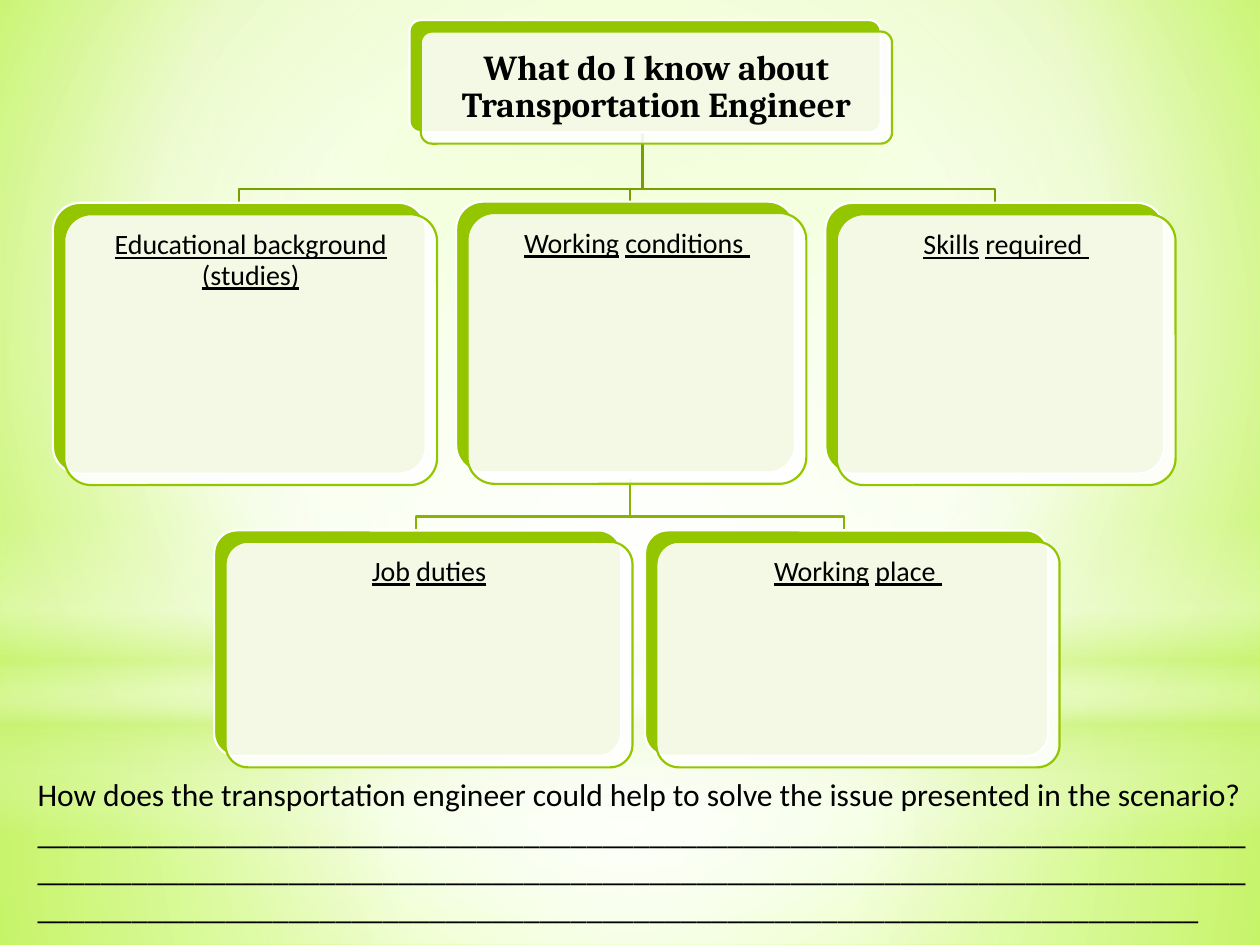
from dataclasses import dataclass
from lxml import etree
from pptx import Presentation
from pptx import util as u
from pptx.dml.color import RGBColor
from pptx.enum import shapes, text
from pptx.oxml.ns import qn

KIND = shapes.MSO_SHAPE
UNIT = u.Inches(0.1)  # the slide is a grid of 100 columns and 75 rows


class Theme:
    green, white, ink = "94C600", "FFFFFF", "000000"
    upper, lower = "779F00", "86B400"
    head, body = "Cambria", "Calibri"
    big, mid, small = 20, 18, 16
    line = 1.25
    tint = "CAF278"


@dataclass
class Box:
    x: float
    y: float
    w: float
    h: float

    def shift(self, d):
        return Box(self.x + d, self.y + d, self.w, self.h)

    def inset(self, d):
        return Box(self.x + d, self.y + d, self.w - 2 * d, self.h - 2 * d)

    def emu(self):
        return [u.Emu(int(v * UNIT)) for v in (self.x, self.y, self.w, self.h)]


def color(parent, rgb, alpha=100):
    node = etree.SubElement(parent, qn("a:srgbClr"), val=rgb)
    if alpha < 100:
        etree.SubElement(node, qn("a:alpha"), val=str(alpha * 1000))


def blend(owner, fill, stops, focus=None):
    """Gradient fill: round about the focus rectangle, or top to bottom."""
    fill.gradient()
    grad = next(owner.iter(qn("a:gradFill")))
    grad.clear()
    group = etree.SubElement(grad, qn("a:gsLst"))
    for pos, *tone in stops:
        color(etree.SubElement(group, qn("a:gs"), pos=str(pos * 1000)), *tone)
    if focus:
        way = etree.SubElement(grad, qn("a:path"), path="circle")
        rect = etree.SubElement(way, qn("a:fillToRect"))
        for side, share in zip("ltrb", focus):
            rect.set(side, str(share * 1000))
    else:
        etree.SubElement(grad, qn("a:lin"), ang="5400000", scaled="0")


def backdrop(slide):
    blend(slide._element, slide.background.fill,
          [(0, "CAFF60"), (60, "F7FFE7"), (100, "B7FF29")], (20, 10, 20, 60))
    white, tint, mid = Theme.white, Theme.tint, (50, 50, 50, 50)
    layers = [
        (KIND.RECTANGLE, Box(0, 55.8, 100, 19.2), mid,
         [(0, white, 91), (37, white, 76), (100, tint, 79)]),
        (KIND.RECTANGLE, Box(0, 0, 100, 55.8), mid,
         [(0, white, 89), (48, white, 62), (100, tint, 79)]),
        (KIND.RECTANGLE, Box(0, 41.2, 100, 25), None,
         [(0, white, 0), (29, white, 30), (45, tint, 40), (55, white, 26),
          (65, tint, 60), (100, white, 0)]),
        (KIND.OVAL, Box(0, 17.5, 100, 55.8), mid,
         [(0, white), (56, white, 0)]),
    ]
    for kind, box, focus, stops in layers:
        item = slide.shapes.add_shape(kind, *box.emu())
        item.shadow.inherit = False
        item.line.fill.background()
        blend(item._element, item.fill, stops, focus)


def panel(slide, box, fill, line, alpha=100):
    item = slide.shapes.add_shape(KIND.ROUNDED_RECTANGLE, *box.emu())
    item.adjustments[0] = 0.1
    item.shadow.inherit = False
    item.fill.solid()
    item.fill.fore_color.rgb = RGBColor.from_string(fill)
    if alpha < 100:
        tone = next(item._element.spPr.iter(qn("a:srgbClr")))
        etree.SubElement(tone, qn("a:alpha"), val=str(alpha * 1000))
    item.line.color.rgb = RGBColor.from_string(line)
    item.line.width = u.Pt(Theme.line)


def write(item, box, parts, face, size, pad=None, bold=False, under=False,
          anchor=text.MSO_ANCHOR.TOP, align=text.PP_ALIGN.CENTER, gap=0.9,
          fit=text.MSO_AUTO_SIZE.NONE):
    item.left, item.top, item.width, item.height = box.emu()
    frame = item.text_frame
    look = {"word_wrap": True, "auto_size": fit, "vertical_anchor": anchor}
    if pad:
        look |= {f"margin_{side}": u.Inches(pad)
                 for side in ("left", "top", "right", "bottom")}
    for name, value in look.items():
        setattr(frame, name, value)
    para = frame.paragraphs[0]
    para.alignment, para.line_spacing = align, gap
    for part in parts:
        run = para.add_run()
        run.text = part
        style = {"name": face, "size": u.Pt(size), "bold": bold,
                 "underline": under and part != " "}
        for name, value in style.items():
            setattr(run.font, name, value)
        run.font.color.rgb = RGBColor.from_string(Theme.ink)


def card(slide, box):
    """Draws the two panels and returns the room for text."""
    front = box.shift(0.9)
    panel(slide, box, Theme.green, Theme.white)
    panel(slide, front, Theme.white, Theme.green, 90)
    return front.inset(0.029 * box.h)


def topic(slide, box, parts):
    room = card(slide, box)
    item = slide.shapes.add_textbox(*room.emu())
    write(item, room, parts, Theme.body, Theme.small, 0.07, under=True)


def heading(slide, box, words):
    room = card(slide, box)
    item = slide.shapes.title
    slide.shapes._spTree.append(item._element)
    write(item, room, [words], Theme.head, Theme.big, 0.08, bold=True,
          anchor=text.MSO_ANCHOR.MIDDLE)


def branch(slide, top, child, tone):
    """Elbow line from the foot of one card to the head of another."""
    x, y = top.x + top.w / 2, top.y + top.h
    end, knee = child.x + child.w / 2, child.y - 0.8
    pen = slide.shapes.build_freeform(x, y, scale=UNIT)
    pen.add_line_segments([(x, knee), (end, knee), (end, child.y)], close=False)
    item = pen.convert_to_shape()
    item.shadow.inherit = False
    item.fill.background()
    item.line.color.rgb = RGBColor.from_string(tone)
    item.line.width = u.Pt(Theme.line)


def question(slide, box):
    item = slide.shapes.add_textbox(*box.emu())
    words = ("How does the transportation engineer could help to solve "
             "the issue presented in the scenario? ")
    write(item, box, [words + "_" * 228], Theme.body, Theme.mid, gap=1.0,
          align=text.PP_ALIGN.LEFT, fit=text.MSO_AUTO_SIZE.SHAPE_TO_FIT_TEXT)


def main():
    deck = Presentation()
    deck.slide_width, deck.slide_height = 100 * UNIT, 75 * UNIT
    slide = deck.slides.add_slide(deck.slide_layouts[5])
    backdrop(slide)

    root = Box(32.5, 1.6, 37.4, 8.9)
    study = Box(4.2, 16.1, 29.6, 21.5)
    work = Box(36.2, 16, 26.9, 21.5)
    skill = Box(65.5, 16.1, 26.9, 21.5)
    duty = Box(17, 42.1, 32.3, 17.9)
    place = Box(51.2, 42.1, 32, 17.9)

    for child in (skill, work, study):
        branch(slide, root, child, Theme.upper)
    for child in (place, duty):
        branch(slide, work, child, Theme.lower)

    heading(slide, root, "What do I know about Transportation Engineer")
    topics = [
        (study, ["Educational background (studies)"]),
        (work, ["Working", " ", "conditions "]),
        (duty, ["Job", " ", "duties"]),
        (place, ["Working", " ", "place "]),
        (skill, ["Skills", " ", "required "]),
    ]
    for box, parts in topics:
        topic(slide, box, parts)
    question(slide, Box(2, 61, 98, 13.1))
    deck.save("out.pptx")


if __name__ == "__main__":
    main()
